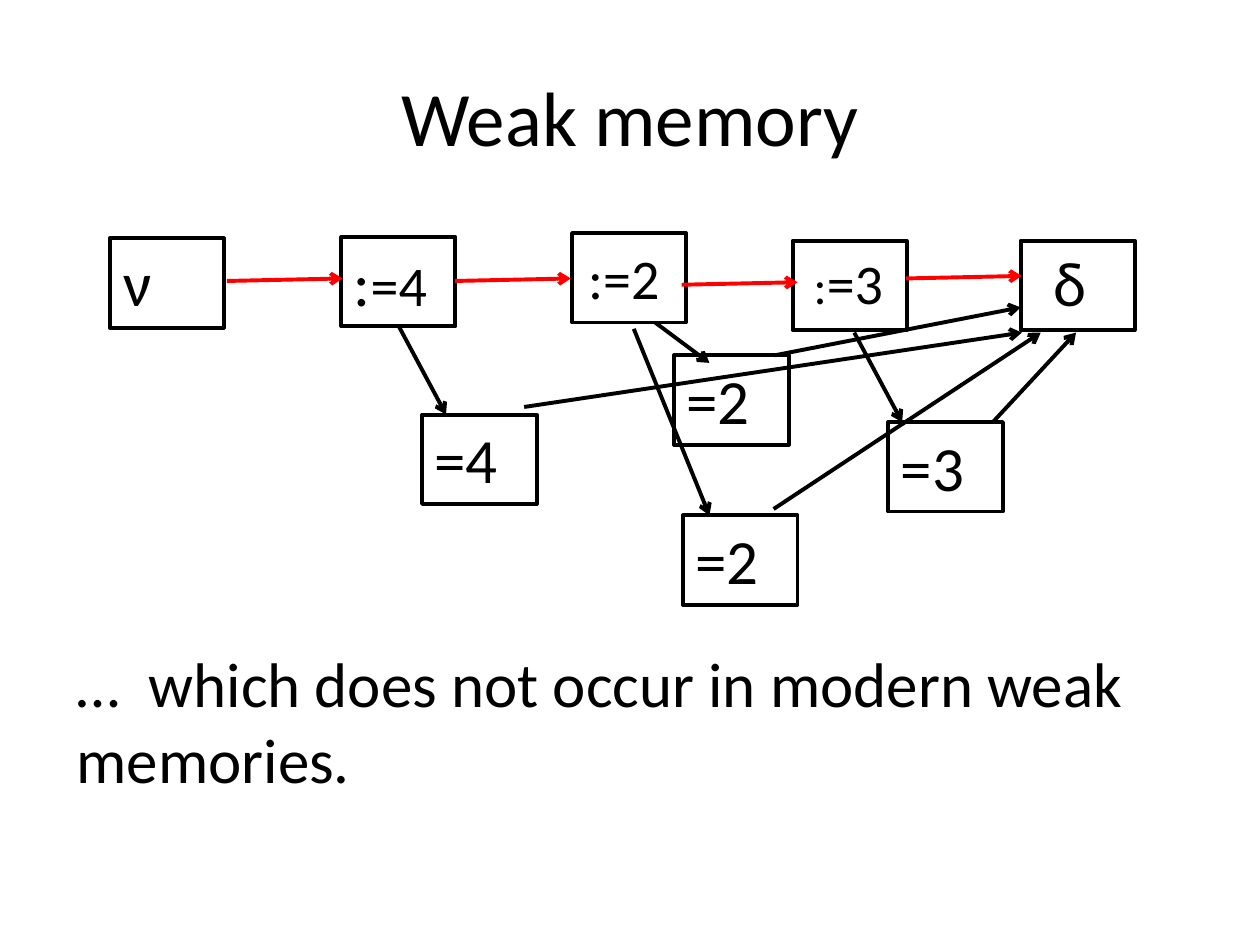
from pptx import Presentation
from pptx.dml.color import RGBColor
from pptx.enum.shapes import MSO_CONNECTOR, MSO_SHAPE
from pptx.enum.text import MSO_ANCHOR, PP_ALIGN
from pptx.oxml.ns import qn
from pptx.util import Inches, Pt
from lxml.etree import SubElement

COLUMNS, ROWS = 100, 75
BLACK, RED = "000000", "FF0000"


def color(hex_string):
    return RGBColor.from_string(hex_string)


class Board:
    font = "Calibri"
    line_width = 2.25

    def __init__(self):
        self.deck = Presentation()
        self.deck.slide_width, self.deck.slide_height = Inches(10), Inches(7.5)
        self.page = self.deck.slides.add_slide(self.deck.slide_layouts[5])

    def grid(self, *lengths):
        units = (self.deck.slide_width / COLUMNS, self.deck.slide_height / ROWS)
        return [round(length * units[i % 2]) for i, length in enumerate(lengths)]

    def fill_text(self, frame, spans, anchor=MSO_ANCHOR.TOP, align=PP_ALIGN.LEFT, wrap=True):
        frame.word_wrap = wrap
        frame.vertical_anchor = anchor
        para = frame.paragraphs[0]
        para.alignment = align
        for words, size in spans:
            span = para.add_run()
            span.text = words
            span.font.name = self.font
            span.font.size = Pt(size)
            span.font.color.rgb = color(BLACK)

    def title(self, words, place):
        box = self.page.shapes.title
        box.left, box.top, box.width, box.height = self.grid(*place)
        self.fill_text(box.text_frame, [(words, 44)], MSO_ANCHOR.MIDDLE, PP_ALIGN.CENTER)

    def text(self, spans, place, anchor=MSO_ANCHOR.TOP, wrap=True):
        box = self.page.shapes.add_textbox(*self.grid(*place))
        self.fill_text(box.text_frame, spans, anchor, wrap=wrap)

    def event(self, place, spans=()):
        box = self.page.shapes.add_shape(MSO_SHAPE.RECTANGLE, *self.grid(*place))
        box.shadow.inherit = False
        box.fill.background()
        box.line.color.rgb = color(BLACK)
        box.line.width = Pt(self.line_width)
        self.fill_text(box.text_frame, spans)

    def arrow(self, start, end, hex_string=BLACK):
        arrow = self.page.shapes.add_connector(
            MSO_CONNECTOR.STRAIGHT, *self.grid(*start, *end))
        arrow.line.color.rgb = color(hex_string)
        arrow.line.width = Pt(self.line_width)
        properties = arrow._element.spPr
        SubElement(properties.find(qn("a:ln")), qn("a:tailEnd"), type="arrow")
        SubElement(properties, qn("a:effectLst"))


def main():
    board = Board()
    board.title("Weak memory", (5, 2.9, 90, 12.5))

    for left, top in [(8.7, 18.9), (27.1, 18.8), (45.4, 18.5), (62.9, 19.1), (81, 19.1)]:
        board.event((left, top, 9.05, 7.1))

    for spans, place, wrap in [
        ([("ν", 36)], (8.8, 18.8, 9.1, 7.1), True),
        ([(":", 36), ("=4", 32)], (27.1, 18.8, 7.9, 7.1), False),
        ([(":=2", 32)], (45.7, 18.8, 7.8, 6.4), False),
        ([(":", 28), ("=3", 32)], (63.6, 19.2, 7.6, 6.4), False),
        ([("δ", 36)], (82.6, 18.8, 4.7, 7.1), False),
    ]:
        board.text(spans, place, wrap=wrap)

    for left, top in [(18, 22.3), (36.1, 22.3), (54.1, 22.6), (71.9, 22.1)]:
        board.arrow((left, top), (left + 9.2, top - 0.2), RED)

    for words, left, top in [("=4", 33.5, 32.9), ("=3", 70.5, 33.5),
                             ("=2", 54.2, 40.9), ("=2", 53.5, 28.2)]:
        board.event((left, top, 9.1, 7.1), [(words, 36)])

    for start, end in [
        ((31.6, 25.8), (35.4, 32.9)),
        ((52, 25.6), (56.3, 28.8)),
        ((50.3, 26.1), (56.3, 40.9)),
        ((67.8, 26.4), (71.6, 33.5)),
        ((41.6, 32.3), (81.1, 26.4)),
        ((61.5, 28.2), (81, 24.4)),
        ((61.4, 40.4), (82.6, 26.4)),
        ((78.8, 33.5), (85.4, 26.4)),
    ]:
        board.arrow(start, end)

    board.text([("…  which does not occur in modern weak memories.", 36)],
               (5.1, 46.9, 90, 20.5), MSO_ANCHOR.MIDDLE)
    board.deck.save("out.pptx")


if __name__ == "__main__":
    main()
